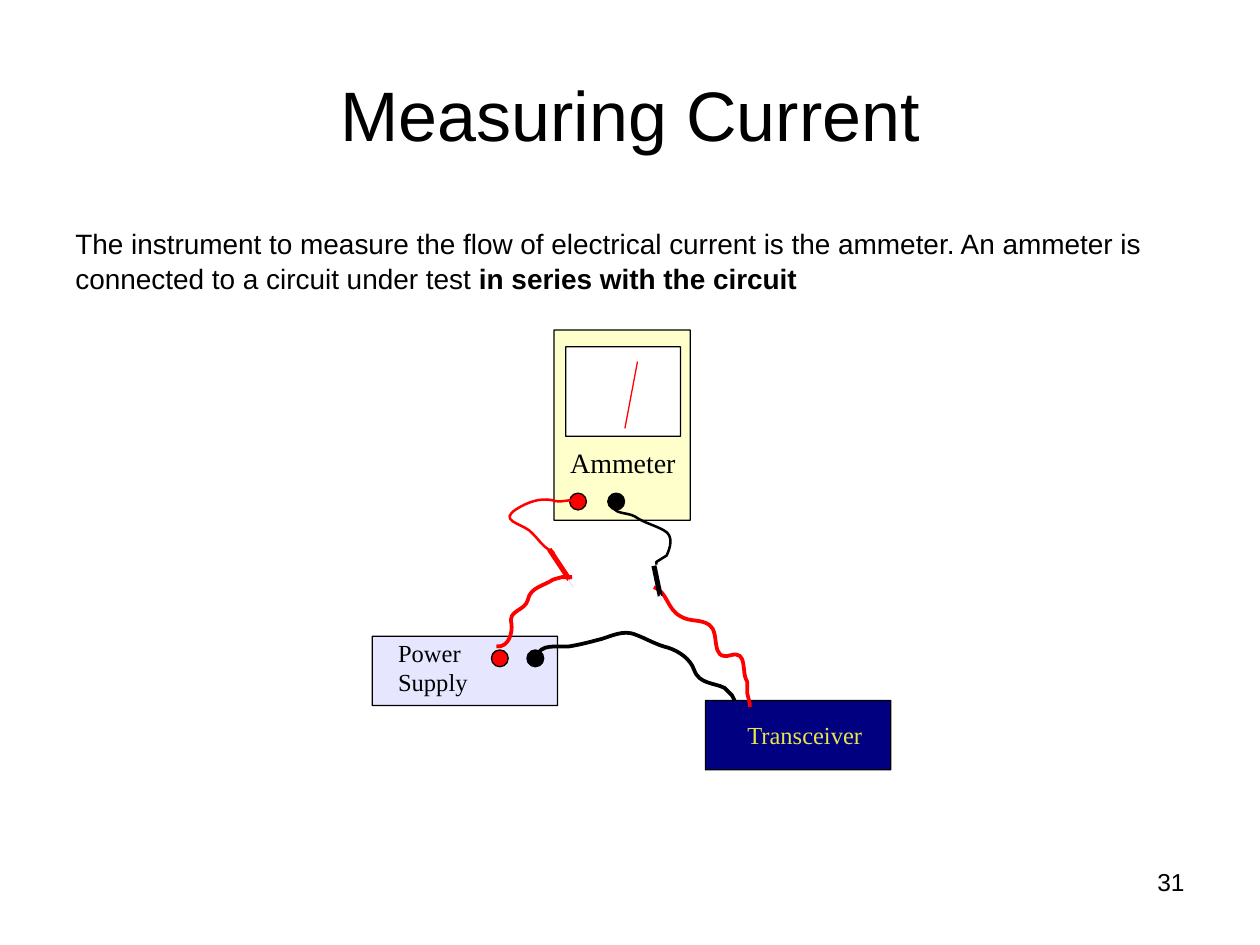
from lxml import etree
from pptx import Presentation
from pptx import util as u
from pptx.dml.color import RGBColor
from pptx.enum import shapes, text
from pptx.oxml.ns import qn

Pt = u.Pt
C = {"black": "000000", "white": "FFFFFF", "red": "FF0000", "cream": "FFFFCC",
     "lilac": "E6E6FF", "navy": "000080", "yellow": "E6E64C"}
ALIGN = text.PP_ALIGN


def write(sp, lines, size, font="Arial", color="black", align=ALIGN.LEFT,
          anchor=text.MSO_ANCHOR.TOP, margins=(0, 0, 0, 0), spacing=1.0, before=0):
    tf = sp.text_frame
    tf.word_wrap = True
    tf.vertical_anchor = anchor
    tf.margin_left, tf.margin_top, tf.margin_right, tf.margin_bottom = map(Pt, margins)
    for i, runs in enumerate(lines):
        p = tf.add_paragraph() if i else tf.paragraphs[0]
        p.alignment, p.line_spacing, p.space_before = align, spacing, Pt(before)
        for words, bold in runs:
            r = p.add_run()
            r.text = words
            r.font.name, r.font.size, r.font.bold = font, Pt(size), bold
            r.font.color.rgb = RGBColor.from_string(C[color])


def outline(sp, color, width):
    sp.line.color.rgb = RGBColor.from_string(C[color])
    sp.line.width = Pt(width)


prs = Presentation()
prs.slide_width, prs.slide_height = Pt(720), Pt(540)
s = prs.slides.add_slide(prs.slide_layouts[5])

title = s.shapes.title
title.left, title.top, title.width, title.height = Pt(36), Pt(44), Pt(648), Pt(46)
write(title, [[("Measuring Current", False)]], 40, align=ALIGN.CENTER,
      anchor=text.MSO_ANCHOR.MIDDLE, spacing=0.95)

body = s.shapes.add_textbox(Pt(36), Pt(126), Pt(648), Pt(356.4))
write(body, [
    [("The instrument to measure the flow of electrical current is the ammeter. "
      "An ammeter is", False)],
    [("connected to a circuit under test ", False), ("in series with the circuit", True)],
], 16, margins=(7.2, 3.6, 7.2, 3.6), before=1)

number = s.shapes.add_textbox(Pt(516.2), Pt(491.8), Pt(167.8), Pt(37.4))
write(number, [[("31", False)]], 14, align=ALIGN.RIGHT, margins=(7.2, 3.6, 7.2, 3.6))

BOX, DOT = shapes.MSO_SHAPE.ROUNDED_RECTANGLE, shapes.MSO_SHAPE.OVAL
parts = [
    (BOX, 316.6, 188.6, 77.8, 108.7, "cream"),
    (BOX, 323.3, 198.2, 65.5, 51.1, "white"),
    (BOX, 212.8, 363.6, 105.8, 39.6, "lilac"),
    (BOX, 403.2, 400.3, 105.8, 39.6, "navy"),
    (DOT, 280.8, 371.4, 9.6, 9.6, "red"),
    (DOT, 301.1, 371.4, 9.6, 9.6, "black"),
    (DOT, 325.5, 281.8, 9.6, 9.6, "red"),
    (DOT, 347.3, 281.8, 9.6, 9.6, "black"),
]
for kind, x, y, w, h, fill in parts:
    sp = s.shapes.add_shape(kind, Pt(x), Pt(y), Pt(w), Pt(h))
    sp.shadow.inherit = False
    sp.fill.solid()
    sp.fill.fore_color.rgb = RGBColor.from_string(C[fill])
    outline(sp, "black", 0.75)
    if kind == BOX:
        sp.adjustments[0] = 0.002

labels = [
    ("Power Supply", 216.7, 364.3, 61.9, 33.8, 10.8, 14, "black"),
    ("Transceiver", 423.4, 411.1, 73.4, 17.3, 3.6, 14, "yellow"),
    ("Ammeter", 320.4, 254.2, 71.3, 19.4, 5.4, 16, "black"),
]
for words, x, y, w, h, inset, size, color in labels:
    sp = s.shapes.add_textbox(Pt(x), Pt(y), Pt(w), Pt(h))
    write(sp, [[(words, False)]], size, font="Times New Roman", color=color,
          margins=(inset, 0, 0, 0), spacing=1.01)

wires = [
    ("black", 2.15, 6, [
        (306.7, 375.8), (308.2, 367.2), (319, 370.1), (325.4, 369.4),
        (330.5, 368.6), (336.2, 367.2), (341.3, 365.8),
        (348.5, 364.3), (355.7, 359.3), (363.6, 362.9),
        (369.4, 365), (375.1, 368.6), (381.6, 370.1),
        (388.1, 372.2), (394.6, 376.6), (396.7, 383),
        (399.6, 391), (408.2, 390.2), (414, 393.1), (418.3, 397.4), (419.8, 400.3)]),
    ("red", 2.15, 3, [
        (283.7, 369.4), (290.9, 370.1), (293, 361.4), (292.3, 356.4),
        (290.2, 348.5), (300.2, 349.2), (301.7, 342.7),
        (303.1, 335.5), (311, 334.8), (316.1, 331.2), (321.1, 329.8), (326.9, 329.8)]),
    ("red", 2.15, 4, [
        (373.7, 335.5), (381.6, 338.4), (380.9, 347.8), (388.8, 352.1),
        (394.6, 355.7), (400.3, 353.5), (405.4, 357.1),
        (411.8, 361.4), (405.4, 378), (417.6, 374.4),
        (427.7, 371.5), (423.4, 384.5), (427, 389.5),
        (427, 396), (428.4, 401.8), (428.4, 403.9)]),
    ("red", 1.45, 4, [
        (331.2, 286.6), (325.4, 284.4), (321.1, 288), (315.4, 285.8),
        (308.2, 284.4), (301, 287.3), (295.2, 290.9),
        (285.1, 297.4), (296.6, 298.8), (302.4, 303.1),
        (308.9, 308.9), (309.6, 312.5), (316.1, 315.4), (316.8, 317.5)]),
    ("black", 1.45, 3, [
        (349.9, 287.3), (349.9, 294.5), (357.8, 292.3), (362.9, 295.2),
        (367.9, 298.8), (374.4, 300.2), (379.4, 303.1),
        (385.2, 306), (383, 313.2), (380.9, 317.5), (375.1, 321.1), (375.1, 322.6)]),
]
for color, width, curves, points in wires:
    start, *rest = [(Pt(x), Pt(y)) for x, y in points]
    builder = s.shapes.build_freeform(*start)
    builder.add_line_segments(rest, close=False)
    sp = builder.convert_to_shape()
    sp.shadow.inherit = False
    sp.fill.background()
    outline(sp, color, width)
    segments = list(sp._element.iter(qn("a:lnTo")))
    for i in range(0, 3 * curves, 3):
        bezier = etree.Element(qn("a:cubicBezTo"))
        segments[i].addprevious(bezier)
        for segment in segments[i:i + 3]:
            bezier.append(segment[0])
            segment.getparent().remove(segment)

straight = [
    (357.1, 244.8, 364.3, 206.6, "red", 0.75),
    (325.4, 331.2, 313.9, 313.9, "red", 2.89),
    (324.7, 331.2, 327.6, 335.5, "lilac", 0.71),
    (377.3, 340.6, 373.7, 323.3, "black", 2.89),
    (377.3, 339.8, 378, 344.2, "lilac", 0.71),
]
for x1, y1, x2, y2, color, width in straight:
    line = s.shapes.add_connector(shapes.MSO_CONNECTOR.STRAIGHT, Pt(x1), Pt(y1), Pt(x2), Pt(y2))
    outline(line, color, width)
    etree.SubElement(line._element.spPr, qn("a:effectLst"))

prs.save("out.pptx")
